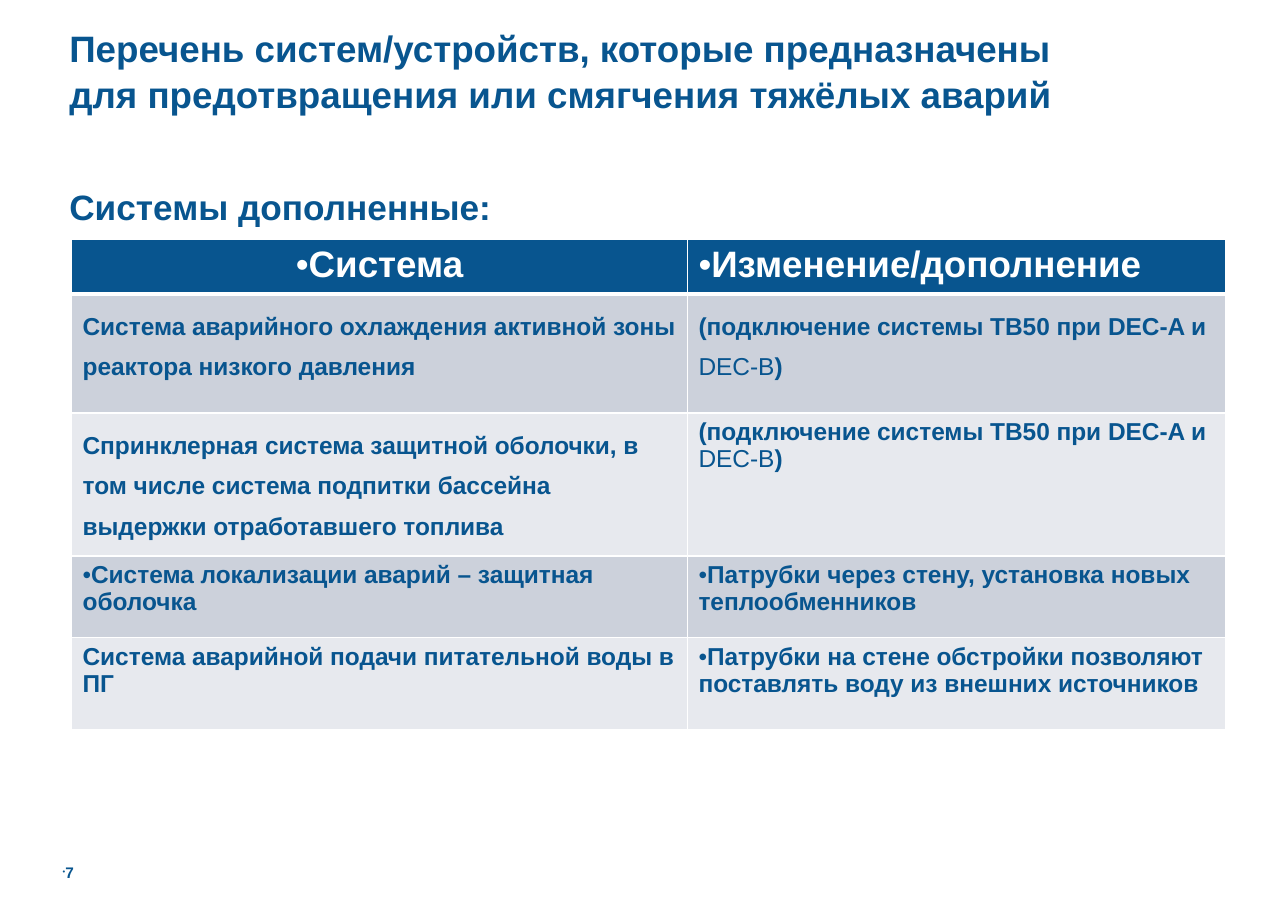
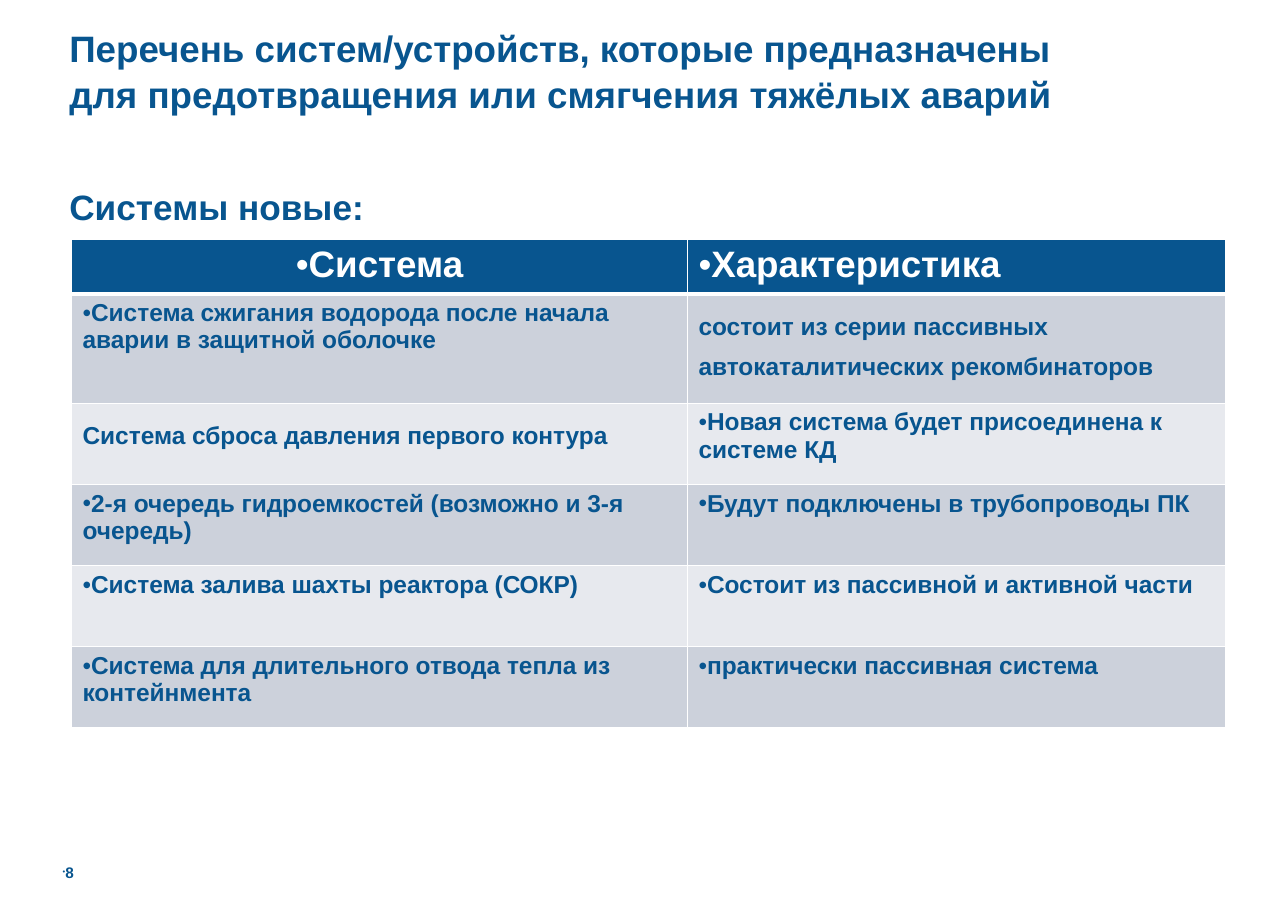
"""Build two slides that list added and new safety systems."""
import dataclasses

import lxml.etree
import pptx
import pptx.dml.color
import pptx.enum.text
import pptx.oxml.ns
import pptx.util

Pt = pptx.util.Pt
Rgb = pptx.dml.color.RGBColor.from_string
Align = pptx.enum.text.PP_ALIGN
Anchor = pptx.enum.text.MSO_ANCHOR


@dataclasses.dataclass(frozen=True)
class Theme:
    font: str = "Arial"
    blue: str = "08558F"
    white: str = "FFFFFF"
    bands: tuple = ("CCD1DB", "E7E9EE")
    title: int = 24
    lead: int = 23
    head: int = 24
    cell: int = 16
    page: int = 10


def put(item, values):
    for name, value in values.items():
        setattr(item, name, value)


def add(parent, tag, **attrs):
    return lxml.etree.SubElement(parent, pptx.oxml.ns.qn(tag), attrs)


class Deck:
    def __init__(self, theme):
        self.theme = theme
        self.show = pptx.Presentation()
        put(self.show, {"slide_width": Pt(841.68), "slide_height": Pt(595.44)})
        self.slide = None

    def start(self):
        self.slide = self.show.slides.add_slide(self.show.slide_layouts[6])

    def fill_text(self, frame, text, size, color, bullet=0, **form):
        para = frame.paragraphs[0]
        if bullet:
            props = para._p.get_or_add_pPr()
            props.set("marL", "0")
            props.set("indent", "0")
            add(props, "a:buSzPct", val=str(bullet * 1000))
            add(props, "a:buFont", typeface=self.theme.font)
            add(props, "a:buChar", char="•")
        put(para, form)
        for spot, part in enumerate(text.split("|")):
            run = para.add_run()
            run.text = part
            put(run.font, {"name": self.theme.font, "size": Pt(size), "bold": spot % 2 == 0})
            run.font.color.rgb = Rgb(color)

    def text(self, place, text, size, pad=(0, 0), anchor=Anchor.TOP, **form):
        frame = self.slide.shapes.add_textbox(*map(Pt, place)).text_frame
        side, edge = map(Pt, pad)
        put(frame, {"word_wrap": True, "vertical_anchor": anchor,
                    "margin_left": side, "margin_right": side,
                    "margin_top": edge, "margin_bottom": edge})
        self.fill_text(frame, text, size, self.theme.blue, **form)

    def title(self, text):
        self.text((41, 14.4, 663, 62.6), text, self.theme.title, (4.3, 2.2),
                  Anchor.MIDDLE, line_spacing=1.05)

    def lead(self, text):
        self.text((41, 105, 380, 414), text, self.theme.lead, (4.3, 2.2), line_spacing=1.5)

    def page(self, text):
        self.text((41, 548, 28, 28), text, self.theme.page, anchor=Anchor.BOTTOM, bullet=50)

    def paint(self, cell, fill, top, base):
        props = cell._tc.get_or_add_tcPr()
        for side, width in zip("LRTB", (1, 1, top, base)):
            line = add(props, f"a:ln{side}", w=str(int(Pt(width))))
            add(add(line, "a:solidFill"), "a:srgbClr", val=self.theme.white)
        cell.fill.solid()
        cell.fill.fore_color.rgb = Rgb(fill)

    def table(self, rows, highs):
        wides = (402.5, 351.5)
        look = self.theme
        grid = self.slide.shapes.add_table(
            len(rows), len(wides), Pt(46.8), Pt(156.2), Pt(sum(wides)), Pt(sum(highs))).table
        put(grid, {"first_row": False, "horz_banding": False})
        for col, wide in zip(grid.columns, wides):
            col.width = Pt(wide)
        for down, (row, high) in enumerate(zip(rows, highs)):
            grid.rows[down].height = Pt(high)
            for across, (kind, text) in enumerate(row):
                cell = grid.cell(down, across)
                head = down == 0
                fill = look.blue if head else look.bands[(down - 1) % 2]
                self.paint(cell, fill, 3 if down == 1 else 1, 3 if head else 1)
                self.fill_text(cell.text_frame, text, look.head if head else look.cell,
                               look.white if head else look.blue, **KINDS[kind])

    def save(self):
        self.show.save("out.pptx")


KINDS = {
    "mid": {"bullet": 100, "alignment": Align.CENTER},
    "dot": {"bullet": 100},
    "wide": {"line_spacing": 1.5},
    "flat": {},
}
TITLE = "Перечень систем/устройств, которые предназначены для предотвращения или смягчения тяжёлых аварий"
LINK = "(подключение системы ТВ50 при DEC-A и |DEC-B|)"
PAGES = (
    ("7", "Системы дополненные:", (34, 77.75, 87, 53.25, 60), (
        (("mid", "Система"), ("dot", "Изменение/дополнение")),
        (("wide", "Система аварийного охлаждения активной зоны реактора низкого давления"),
         ("wide", LINK)),
        (("wide", "Спринклерная система защитной оболочки, в том числе система подпитки "
                  "бассейна выдержки отработавшего топлива"),
         ("flat", LINK)),
        (("dot", "Система локализации аварий – защитная оболочка"),
         ("dot", "Патрубки через стену, установка новых теплообменников")),
        (("flat", "Система аварийной подачи питательной воды в ПГ"),
         ("dot", "Патрубки на стене обстройки позволяют поставлять воду из внешних источников")),
    )),
    ("8", "Системы новые:", (34, 71.5, 53, 53, 53, 53), (
        (("mid", "Система"), ("dot", "Характеристика")),
        (("dot", "Система сжигания водорода после начала аварии в защитной оболочке"),
         ("wide", "состоит из серии пассивных автокаталитических рекомбинаторов")),
        (("wide", "Система сброса давления первого контура"),
         ("dot", "Новая система будет присоединена к системе КД")),
        (("dot", "2-я очередь гидроемкостей (возможно и 3-я очередь)"),
         ("dot", "Будут подключены в трубопроводы ПК")),
        (("dot", "Система залива шахты реактора (СОКР)"),
         ("dot", "Состоит из пассивной и активной части")),
        (("dot", "Система для длительного отвода тепла из контейнмента"),
         ("dot", "практически пассивная система")),
    )),
)


def main():
    deck = Deck(Theme())
    for page, lead, highs, rows in PAGES:
        deck.start()
        deck.title(TITLE)
        deck.lead(lead)
        deck.page(page)
        deck.table(rows, highs)
    deck.save()


if __name__ == "__main__":
    main()
